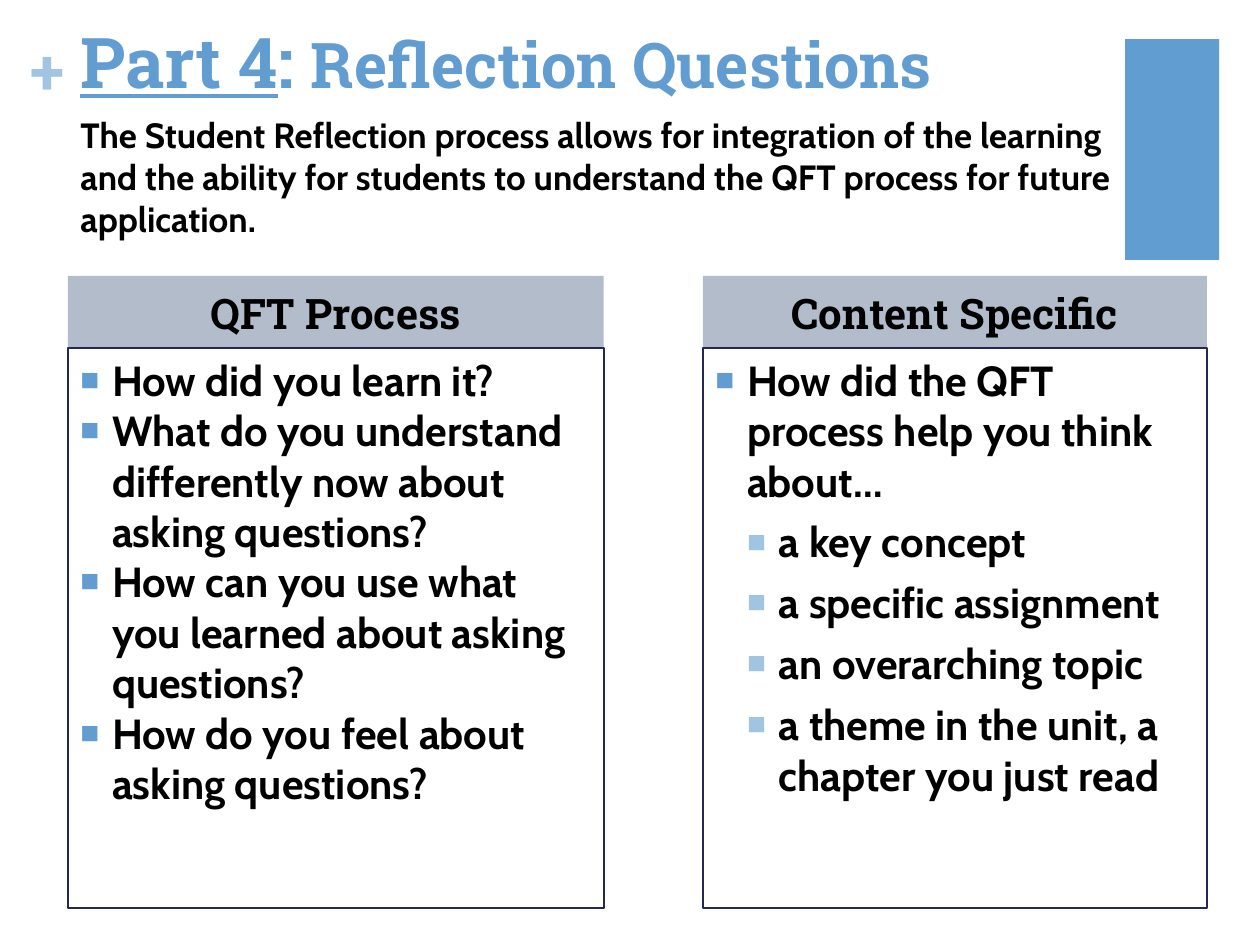
"""Build the slide on reflection questions for the QFT process."""
from lxml.etree import SubElement
from pptx import Presentation
from pptx.dml.color import RGBColor
from pptx.enum.shapes import MSO_SHAPE
from pptx.enum.text import MSO_ANCHOR as Anchor, MSO_AUTO_SIZE as AutoSize, PP_ALIGN as Align
from pptx.oxml.ns import qn
from pptx.util import Cm, Pt

BLUE = RGBColor(0x62, 0x9D, 0xD1)
LIGHT_BLUE = RGBColor(0xA1, 0xC4, 0xE3)
NAVY = RGBColor(0x24, 0x28, 0x52)
GREY = RGBColor(0xB2, 0xBC, 0xCB)
BLACK = RGBColor(0, 0, 0)
SLAB, SANS = "Roboto Slab", "Cabin"
COMPARISON = 4
INDENT = 0.64
HEADER_TOP, HEADER_HEIGHT = 5.56, 1.47
LIST_TOP, LIST_HEIGHT = 7.01, 11.3

COLUMNS = [
    (1.37, 10.8, "QFT Process", [
        (0, "How did you learn it?"),
        (0, "What do you understand differently now about asking questions?"),
        (0, "How can you use what you learned about asking questions?"),
        (0, "How do you feel about asking questions?"),
    ]),
    (14.17, 10.16, "Content Specific", [
        (0, "How did the QFT process help you think about…"),
        (1, "a key concept"),
        (1, "a specific assignment"),
        (1, "an overarching topic"),
        (1, "a theme in the unit, a chapter you just read"),
    ]),
]


class SlideBuilder:
    """Hold the text style and the current slide."""

    def __init__(self, deck):
        self.page = deck.slides.add_slide(deck.slide_layouts[COMPARISON])
        self.bullet_colors = (BLUE, LIGHT_BLUE)

    def place(self, box, left, top, width, height):
        position = {"left": left, "top": top, "width": width, "height": height}
        for name, value in position.items():
            setattr(box, name, Cm(value))

    def frame(self, box, anchor=Anchor.TOP, side=0.25, edge=0.13):
        values = {
            "word_wrap": True, "auto_size": AutoSize.NONE, "vertical_anchor": anchor,
            "margin_left": Cm(side), "margin_right": Cm(side),
            "margin_top": Cm(edge), "margin_bottom": Cm(edge),
        }
        for name, value in values.items():
            setattr(box.text_frame, name, value)
        return box.text_frame

    def add_span(self, para, text, size, font=SLAB, color=BLACK, underline=False):
        span = para.add_run()
        span.text = text
        values = {"name": font, "size": Pt(size), "bold": True, "underline": underline}
        for name, value in values.items():
            setattr(span.font, name, value)
        span.font.color.rgb = color

    def layout(self, para, align=Align.LEFT, before=0):
        values = {"alignment": align, "space_before": Pt(before), "line_spacing": 1.0}
        for name, value in values.items():
            setattr(para, name, value)

    def bullet(self, para, level):
        para.level = level
        props = para._p.get_or_add_pPr()
        props.set("marL", str(Cm(INDENT * (level + 1))))
        props.set("indent", str(-Cm(INDENT)))
        color = SubElement(props, qn("a:buClr"))
        SubElement(color, qn("a:srgbClr"), val=str(self.bullet_colors[level]))
        SubElement(props, qn("a:buSzPct"), val="75000")
        SubElement(props, qn("a:buChar"), char="■")

    def title(self, spans, *position):
        box = self.page.shapes.title
        self.place(box, *position)
        para = self.frame(box).paragraphs[0]
        self.layout(para)
        for text, size, underline in spans:
            self.add_span(para, text, size, color=BLUE, underline=underline)

    def header(self, index, text, *position):
        box = self.page.placeholders[index]
        self.place(box, *position)
        box.fill.solid()
        box.fill.fore_color.rgb = GREY
        para = self.frame(box, Anchor.MIDDLE, edge=0).paragraphs[0]
        self.layout(para, Align.CENTER)
        self.add_span(para, text, 24)

    def bullets(self, index, items, *position):
        box = self.page.placeholders[index]
        self.place(box, *position)
        box.line.color.rgb = NAVY
        box.line.width = Pt(1)
        frame = self.frame(box)
        for number, (level, text) in enumerate(items):
            para = frame.add_paragraph() if number else frame.paragraphs[0]
            self.bullet(para, level)
            self.layout(para, before=6 * level)
            self.add_span(para, text, 24, SANS)

    def text(self, text, position, size, font, color, **margins):
        box = self.page.shapes.add_textbox(*map(Cm, position))
        para = self.frame(box, **margins).paragraphs[0]
        self.layout(para)
        self.add_span(para, text, size, font, color)

    def block(self, *position):
        shape = self.page.shapes.add_shape(MSO_SHAPE.RECTANGLE, *map(Cm, position))
        shape.shadow.inherit = False
        shape.fill.solid()
        shape.fill.fore_color.rgb = BLUE
        shape.line.fill.background()


def main():
    deck = Presentation()
    deck.slide_width, deck.slide_height = Cm(25.4), Cm(19.05)
    slide = SlideBuilder(deck)
    slide.block(22.68, 0.79, 1.9, 4.45)
    slide.text("+", (0.61, 0.64, 0.74, 1.55), 36, SLAB, LIGHT_BLUE, side=0, edge=0)
    slide.title([("Part 4", 40, True), (": ", 40, False), ("Reflection Questions", 36, False)],
                1.37, 0.25, 20.98, 3.1)
    for number, (left, width, heading, items) in enumerate(COLUMNS):
        index = 2 * number + 1
        slide.bullets(index + 1, items, left, LIST_TOP, width, LIST_HEIGHT)
        slide.header(index, heading, left, HEADER_TOP, width, HEADER_HEIGHT)
    slide.text("The Student Reflection process allows for integration of the learning and the "
               "ability for students to understand the QFT process for future application.",
               (1.37, 2.16, 21.84, 2.49), 20, SANS, BLACK)
    deck.save("out.pptx")


if __name__ == "__main__":
    main()
